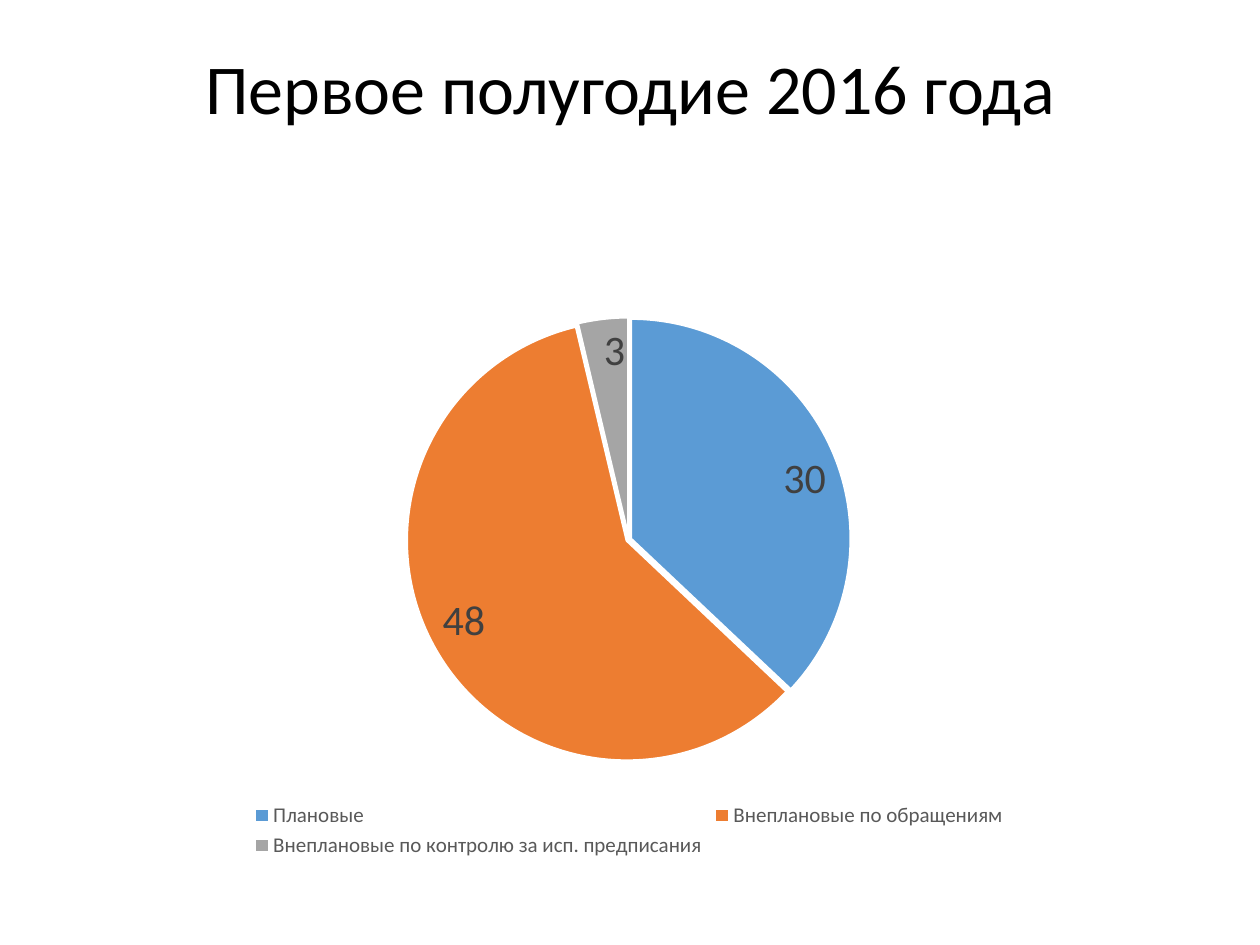
from lxml import etree
from pptx import Presentation
from pptx.chart.data import CategoryChartData
from pptx.dml.color import RGBColor
from pptx.enum.chart import XL_CHART_TYPE, XL_LABEL_POSITION, XL_LEGEND_POSITION
from pptx.enum.text import MSO_ANCHOR, PP_ALIGN
from pptx.oxml.ns import qn
from pptx.util import Inches, Pt

PIE = XL_CHART_TYPE.PIE
INSIDE_END = XL_LABEL_POSITION.INSIDE_END
BOTTOM = XL_LEGEND_POSITION.BOTTOM
MIDDLE = MSO_ANCHOR.MIDDLE
CENTER = PP_ALIGN.CENTER

FONT = "Calibri"
INSPECTIONS = [
    ("Плановые", 30, "5B9BD5"),
    ("Внеплановые по обращениям", 48, "ED7D31"),
    ("Внеплановые по контролю за исп. предписания", 3, "A5A5A5"),
]


def color(value):
    return RGBColor.from_string(value)


def set_font(font, size, value):
    font.name = FONT
    font.size = Pt(size)
    font.color.rgb = color(value)


def place(shape, left, top, width, height):
    shape.left, shape.top = Inches(left), Inches(top)
    shape.width, shape.height = Inches(width), Inches(height)


def add_title(page, text):
    title = page.shapes.title
    place(title, 0.69, 0, 8.62, 1.46)
    frame = title.text_frame
    frame.text = text
    frame.word_wrap = True
    frame.vertical_anchor = MIDDLE
    para = frame.paragraphs[0]
    para.alignment = CENTER
    para.line_spacing = 0.9
    set_font(para.font, 40, "000000")


def chart_element(tag, value):
    element = etree.Element(qn(tag))
    element.set("val", str(value))
    return element


def set_plot_area(chart, x, y, w, h):
    """Fix the inner plot area as fractions of the chart."""
    area = chart._chartSpace.find(".//" + qn("c:plotArea"))
    for old in area.findall(qn("c:layout")):
        area.remove(old)
    layout = etree.Element(qn("c:layout"))
    manual = etree.SubElement(layout, qn("c:manualLayout"))
    settings = {"layoutTarget": "inner", "xMode": "edge", "yMode": "edge",
                "x": x, "y": y, "w": w, "h": h}
    for name, value in settings.items():
        manual.append(chart_element("c:" + name, value))
    area.insert(0, layout)


def style_slice(point, fill):
    point.format.fill.solid()
    point.format.fill.fore_color.rgb = color(fill)
    point.format.line.color.rgb = color("FFFFFF")
    point.format.line.width = Pt(1.5)


def explode(element, percent):
    """Move a series or a slice out from the centre of the pie."""
    element.find(qn("c:spPr")).addnext(chart_element("c:explosion", percent))


def explode_slice(element, percent):
    element.find(qn("c:spPr")).addprevious(chart_element("c:explosion", percent))


def add_pie(page):
    names, values, fills = zip(*INSPECTIONS)
    data = CategoryChartData()
    data.categories = names
    data.add_series("Series 1", values)
    frame = page.shapes.add_chart(
        PIE, Inches(0.69), Inches(1.7), Inches(8.61), Inches(5.15), data)
    chart = frame.chart
    set_font(chart.font, 10, "000000")
    chart.has_title = False
    chart.has_legend = True
    chart.legend.position = BOTTOM
    chart.legend.include_in_layout = False
    set_font(chart.legend.font, 12, "595959")
    set_plot_area(chart, 0.08, 0.125, 0.839, 0.753)

    plot = chart.plots[0]
    plot.vary_by_categories = True
    series = plot.series[0]
    series.format.line.color.rgb = color("FFFFFF")
    explode(series._element, 11)
    for index, fill in enumerate(fills):
        style_slice(series.points[index], fill)
    for slice_element in series._element.findall(qn("c:dPt")):
        explode_slice(slice_element, 1)

    labels = series.data_labels
    labels.show_value = True
    labels.show_percentage = False
    labels.position = INSIDE_END
    set_font(labels.font, 24, "404040")


def main():
    deck = Presentation()
    deck.slide_width, deck.slide_height = Inches(10), Inches(7.5)
    page = deck.slides.add_slide(deck.slide_layouts[5])
    add_title(page, "Первое полугодие 2016 года")
    add_pie(page)
    deck.save("out.pptx")


if __name__ == "__main__":
    main()
